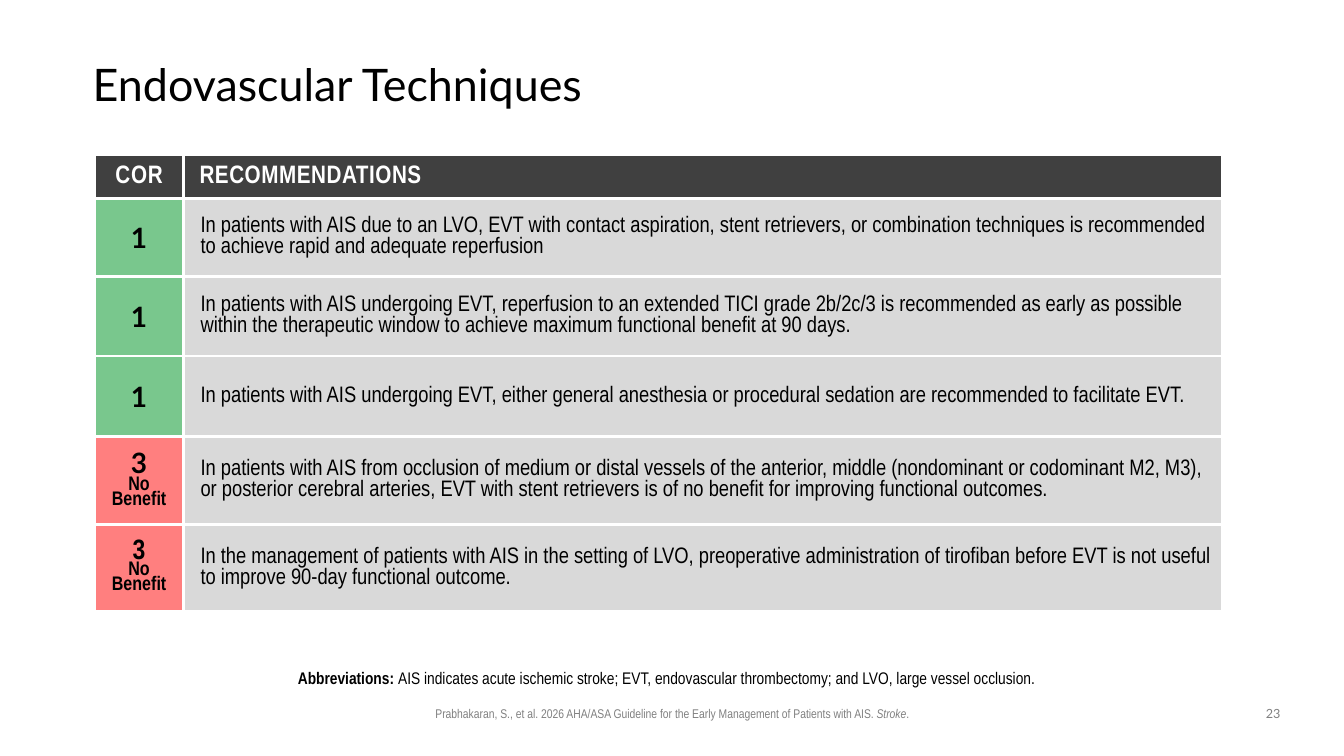
from dataclasses import dataclass

from lxml import etree
from pptx import Presentation
from pptx.dml.color import RGBColor
from pptx.enum.text import MSO_ANCHOR, PP_ALIGN
from pptx.oxml.ns import qn
from pptx.util import Pt

LEFT, CENTER = PP_ALIGN.LEFT, PP_ALIGN.CENTER
TOP, MIDDLE, BOTTOM = MSO_ANCHOR.TOP, MSO_ANCHOR.MIDDLE, MSO_ANCHOR.BOTTOM

BLACK = RGBColor(0x00, 0x00, 0x00)
WHITE = RGBColor(0xFF, 0xFF, 0xFF)
GRAY = RGBColor(0x80, 0x80, 0x80)
HEADER_FILL = RGBColor(0x40, 0x40, 0x40)
BODY_FILL = RGBColor(0xD9, 0xD9, 0xD9)
GREEN = RGBColor(0x79, 0xC7, 0x8D)
RED = RGBColor(0xFF, 0x7F, 0x7F)

LATO, NARROW = "Lato", "Arial Narrow"
BORDER_WIDTH = Pt(2.25)
CELL_MARGIN = 3.6


@dataclass
class TextRun:
    text: str
    size: float
    font: str = NARROW
    color: RGBColor = BLACK
    bold: bool = False
    italic: bool = False
    tracking: float = 0


@dataclass
class TextLine:
    runs: list[TextRun]
    align: int = CENTER
    spacing: float = 1.0


@dataclass
class Label:
    box: tuple[float, float, float, float]
    line: TextLine
    anchor: int = TOP
    margins: tuple[float, float, float, float] = (7.2, 3.6, 7.2, 3.6)


@dataclass
class Recommendation:
    text: str
    height: float
    beneficial: bool = True
    number_font: str = LATO


LABELS = [
    # Title
    Label((66.24, 28.8, 828, 66.24),
          TextLine([TextRun("Endovascular Techniques", 32, LATO)], LEFT, 0.9),
          MIDDLE, (0, 0, 0, 0)),
    # Abbreviations
    Label((135.36, 462.24, 689.04, 33.12),
          TextLine([TextRun("Abbreviations: ", 12, bold=True),
                    TextRun("AIS indicates acute ischemic stroke; EVT, endovascular "
                            "thrombectomy; and LVO, large vessel occlusion.", 12)],
                   spacing=0.9),
          BOTTOM, (0, 3.6, 7.2, 3.6)),
    # Citation
    Label((169.92, 500.4, 620.64, 18),
          TextLine([TextRun("Prabhakaran, S., et al. 2026 AHA/ASA Guideline for the Early "
                            "Management of Patients with AIS. ", 9, color=GRAY),
                    TextRun("Stroke", 9, color=GRAY, italic=True),
                    TextRun(".", 9, color=GRAY)])),
    # Slide number
    Label((894.24, 500.4, 30.24, 18.72),
          TextLine([TextRun("23", 9, LATO, GRAY)])),
]

TABLE_LEFT, TABLE_TOP = 67.68, 110.3
COLUMN_WIDTHS = (63.36, 742.32)
HEADER_HEIGHT = 31.7
RECOMMENDATIONS = [
    Recommendation("In patients with AIS due to an LVO, EVT with contact aspiration, stent "
                   "retrievers, or combination techniques is recommended to achieve rapid "
                   "and adequate reperfusion", 55.4),
    Recommendation("In patients with AIS undergoing EVT, reperfusion to an extended TICI "
                   "grade 2b/2c/3 is recommended as early as possible within the "
                   "therapeutic window to achieve maximum functional benefit at 90 days.",
                   56.9),
    Recommendation("In patients with AIS undergoing EVT, either general anesthesia or "
                   "procedural sedation are recommended to facilitate EVT.", 57.6),
    Recommendation("In patients with AIS from occlusion of medium or distal vessels of the "
                   "anterior, middle (nondominant or codominant M2, M3), or posterior "
                   "cerebral arteries, EVT with stent retrievers is of no benefit for "
                   "improving functional outcomes.", 62.6, False),
    Recommendation("In the management of patients with AIS in the setting of LVO, "
                   "preoperative administration of tirofiban before EVT is not useful to "
                   "improve 90-day functional outcome.", 62.6, False, NARROW),
]


def write_lines(text_frame, lines: list[TextLine]) -> None:
    for index, line in enumerate(lines):
        paragraph = text_frame.add_paragraph() if index else text_frame.paragraphs[0]
        paragraph.alignment = line.align
        paragraph.line_spacing = line.spacing
        for text_run in line.runs:
            run = paragraph.add_run()
            run.text = text_run.text
            formats = {"size": Pt(text_run.size), "name": text_run.font,
                       "bold": text_run.bold, "italic": text_run.italic}
            for name, value in formats.items():
                setattr(run.font, name, value)
            run.font.color.rgb = text_run.color
            if text_run.tracking:
                run._r.get_or_add_rPr().set("spc", str(round(text_run.tracking * 100)))


def set_margins(target, margins: tuple[float, float, float, float]) -> None:
    for side, margin in zip(("left", "top", "right", "bottom"), margins):
        setattr(target, f"margin_{side}", Pt(margin))


def draw_label(slide, label: Label) -> None:
    shape = slide.shapes.add_textbox(*map(Pt, label.box))
    text_frame = shape.text_frame
    text_frame.word_wrap = True
    text_frame.vertical_anchor = label.anchor
    set_margins(text_frame, label.margins)
    write_lines(text_frame, [label.line])


def fill_cell(cell, lines: list[TextLine], fill: RGBColor, left: float = CELL_MARGIN) -> None:
    # Borders come before the fill in the cell properties
    properties = cell._tc.get_or_add_tcPr()
    for side in ("lnL", "lnR", "lnT", "lnB"):
        border = etree.SubElement(properties, qn(f"a:{side}"), w=str(BORDER_WIDTH))
        solid = etree.SubElement(border, qn("a:solidFill"))
        etree.SubElement(solid, qn("a:srgbClr"), val=str(WHITE))
    cell.fill.solid()
    cell.fill.fore_color.rgb = fill
    cell.vertical_anchor = MIDDLE
    set_margins(cell, (left, CELL_MARGIN, CELL_MARGIN, CELL_MARGIN))
    write_lines(cell.text_frame, lines)


def class_lines(item: Recommendation) -> list[TextLine]:
    if item.beneficial:
        return [TextLine([TextRun("1", 20, item.number_font, bold=True)])]
    return [TextLine([TextRun("3", 20, item.number_font, bold=True)], spacing=0.8),
            TextLine([TextRun("No Benefit", 14, bold=True)], spacing=0.8)]


def draw_table(slide) -> None:
    heights = [HEADER_HEIGHT] + [item.height for item in RECOMMENDATIONS]
    frame = slide.shapes.add_table(len(heights), len(COLUMN_WIDTHS),
                                   Pt(TABLE_LEFT), Pt(TABLE_TOP),
                                   Pt(sum(COLUMN_WIDTHS)), Pt(sum(heights)))
    table = frame.table
    table.horz_banding = False
    for column, width in zip(table.columns, COLUMN_WIDTHS):
        column.width = Pt(width)
    for row, height in zip(table.rows, heights):
        row.height = Pt(height)

    # Header row
    headers = (("COR", CENTER, 0.5, CELL_MARGIN), ("RECOMMENDATIONS", LEFT, 0.4, 11.5))
    for column, (text, align, tracking, left) in enumerate(headers):
        run = TextRun(text, 18, color=WHITE, bold=True, tracking=tracking)
        fill_cell(table.cell(0, column), [TextLine([run], align)], HEADER_FILL, left)

    # Recommendation rows
    for row, item in enumerate(RECOMMENDATIONS, start=1):
        fill_cell(table.cell(row, 0), class_lines(item), GREEN if item.beneficial else RED)
        fill_cell(table.cell(row, 1), [TextLine([TextRun(item.text, 16)], LEFT)],
                  BODY_FILL, 12.24)


def main() -> None:
    presentation = Presentation()
    presentation.slide_width, presentation.slide_height = Pt(960), Pt(540)
    slide = presentation.slides.add_slide(presentation.slide_layouts[6])
    draw_table(slide)
    for label in LABELS:
        draw_label(slide, label)
    presentation.save("out.pptx")


if __name__ == "__main__":
    main()
